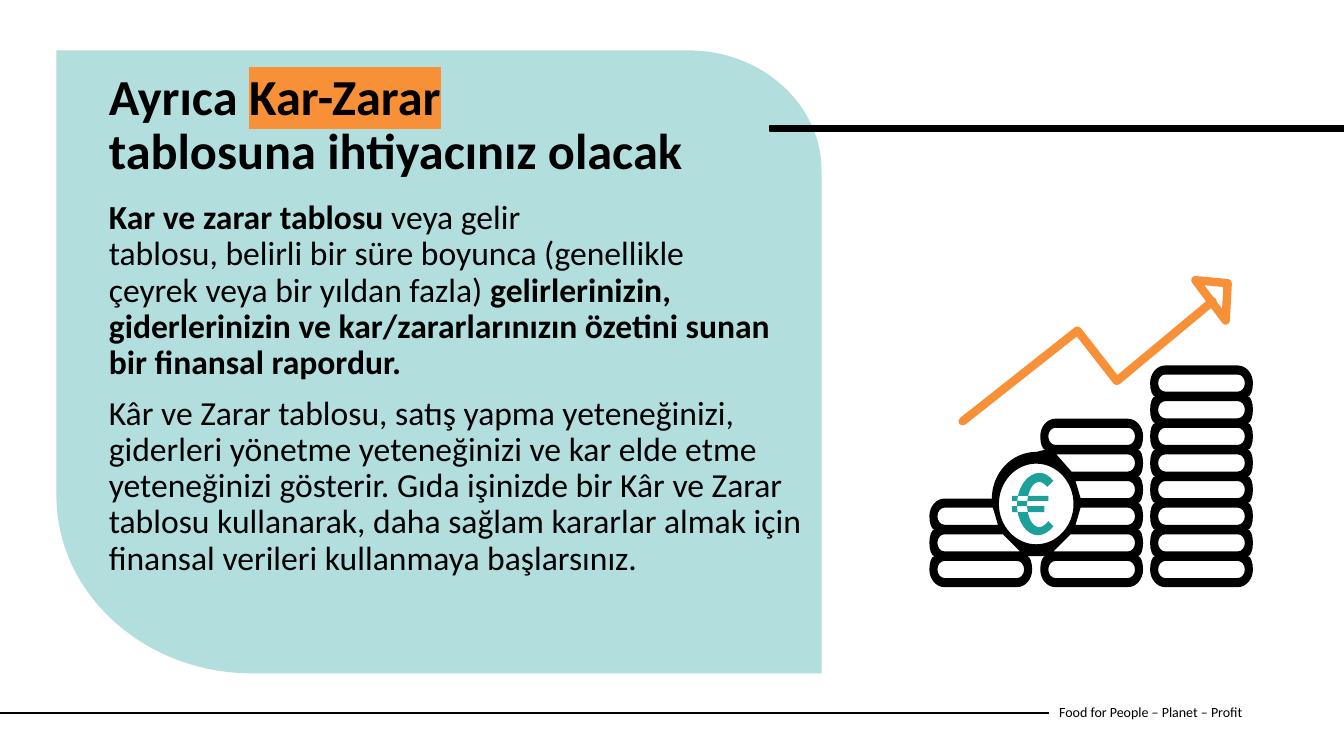
import dataclasses

import lxml.etree
import pptx
import pptx.dml.color
import pptx.enum.shapes
import pptx.enum.text
import pptx.oxml.ns
import pptx.util

COLUMNS, ROWS = 160, 90
UNIT = pptx.util.Inches(7.5) // ROWS
ROUNDNESS = 0.55
PITCH = 3.17
LOWEST_COIN = 67.8
STACK_WIDTH = 12.24
qn = pptx.oxml.ns.qn


@dataclasses.dataclass(frozen=True)
class Theme:
    font: str = "Calibri"
    ink: str = "000000"
    panel: str = "B2DEDD"
    accent: str = "F79037"
    euro: str = "1BA19A"
    title_size: int = 36
    body_size: int = 24
    footer_size: int = 10
    thin: float = 1.5
    bar: float = 1.93
    trend: float = 6


THEME = Theme()


def grid(*lengths):
    """Turn grid columns or rows into EMU."""
    return [round(length * UNIT) for length in lengths]


def rgb(colour):
    return pptx.dml.color.RGBColor.from_string(colour)


def paint(shape, fill=None, line=None, width=0):
    shape.shadow.inherit = False
    if fill:
        shape.fill.solid()
        shape.fill.fore_color.rgb = rgb(fill)
    else:
        shape.fill.background()
    if line:
        shape.line.color.rgb = rgb(line)
        shape.line.width = pptx.util.Pt(width)
    else:
        shape.line.fill.background()
    return shape


def segments(contour):
    """Yield one point per straight move and three per (end, corner) move."""
    here = None
    for move in contour:
        if isinstance(move[0], tuple):
            end, corner = move
            yield [tuple(p + ROUNDNESS * (c - p) for p, c in zip(point, corner))
                   for point in (here, end)] + [end]
            here = end
        else:
            yield [move]
            here = move


def add_outline(shapes, *contours, close=True, **look):
    traced = [list(segments(contour)) for contour in contours]
    builder = None
    for contour in traced:
        first, *others = [grid(*point) for segment in contour for point in segment]
        if builder:
            builder.move_to(*first)
        else:
            builder = shapes.build_freeform(*first, scale=1.0)
        builder.add_line_segments(others, close=close)
    shape = builder.convert_to_shape()
    route = next(shape.element.iter(qn("a:path")))
    commands = iter(list(route))
    for contour in traced:
        for segment in contour:
            straight = [next(commands) for _ in segment]
            if len(segment) == 3:
                curve = lxml.etree.Element(qn("a:cubicBezTo"))
                straight[0].addprevious(curve)
                for command in straight:
                    curve.append(command[0])
                    route.remove(command)
        if close:
            next(commands)
    return paint(shape, **look)


def add_rule(shapes, start, end):
    rule = shapes.add_connector(pptx.enum.shapes.MSO_CONNECTOR.STRAIGHT,
                                *grid(*start), *grid(*end))
    rule.line.color.rgb = rgb(THEME.ink)
    rule.line.width = pptx.util.Pt(THEME.thin)
    lxml.etree.SubElement(rule.element.spPr, qn("a:effectLst"))


def add_run(paragraph, text, size, bold=False, highlight=None):
    """Add a run; a tilde in the text stands for a no-break space."""
    run = paragraph.add_run()
    run.text = text.replace("~", chr(160))
    run.font.size = pptx.util.Pt(size)
    run.font.bold = bold
    run.font.name = THEME.font
    run.font.color.rgb = rgb(THEME.ink)
    if highlight:
        marker = lxml.etree.Element(qn("a:highlight"))
        lxml.etree.SubElement(marker, qn("a:srgbClr")).set("val", highlight)
        run._r.rPr.find(qn("a:solidFill")).addnext(marker)


def fill_text(holder, box, paragraphs, size, anchor=pptx.enum.text.MSO_ANCHOR.TOP):
    """Place a text holder and write paragraphs of (text, bold, highlight) runs."""
    holder.left, holder.top, holder.width, holder.height = grid(*box)
    frame = holder.text_frame
    frame.word_wrap = True
    frame.auto_size = pptx.enum.text.MSO_AUTO_SIZE.NONE
    frame.vertical_anchor = anchor
    for index, runs in enumerate(paragraphs):
        paragraph = frame.add_paragraph() if index else frame.paragraphs[0]
        paragraph.alignment = pptx.enum.text.PP_ALIGN.LEFT
        paragraph.line_spacing = 0.9
        paragraph.space_before = pptx.util.Pt(10 if index else 0)
        properties = paragraph._p.get_or_add_pPr()
        properties.set("marL", "0")
        properties.set("indent", "0")
        lxml.etree.SubElement(properties, qn("a:buNone"))
        for text, bold, highlight in runs:
            add_run(paragraph, text, size, bold, highlight)


def add_panel(shapes):
    left, top, right, bottom = 6.72, 6, 97.8, 80.16
    return add_outline(shapes, [
        (right, bottom), (30, bottom), ((left, 59.04), (left, bottom)),
        (left, top), (81.96, top), ((right, 20.28), (right, top))], fill=THEME.panel)


def coin_rows(count):
    """Centres of a stack's coins, from the top down."""
    return [LOWEST_COIN - PITCH * level for level in reversed(range(count))]


def stack_side(edge, inward, count):
    """Points down one side of a stack: corner, bulges with notches, corner."""
    rows = coin_rows(count)
    points = [(edge + inward * 1.8, rows[0] - 2.1)]
    for row in rows:
        points += [(edge, row), (edge + inward * 0.6, row + PITCH / 2)]
    points[-1] = (edge + inward * 1.8, rows[-1] + 2.1)
    return points


def bulge(points):
    """Round a run of side points, which lie on the edge at every second one."""
    edge = points[1][0]
    moves = [points[0]]
    for start, end in zip(points, points[1:]):
        moves.append((end, (edge, start[1] if end[0] == edge else end[1])))
    return moves


def slot_end(edge, inward, row):
    """Rounded end of a coin's opening, from its upper to its lower side."""
    shoulder = edge + inward * 0.84
    return bulge([(shoulder, row - 1.02), (edge, row), (shoulder, row + 1.02)])


def slot(left, row):
    upward = slot_end(left + 0.96, 1, row)
    shoulder, bottom = left + 1.8, row + 1.02
    return (slot_end(left + STACK_WIDTH - 0.96, -1, row)
            + [(shoulder, bottom), ((left + 0.96, row), (left + 0.96, bottom)),
               (upward[0], (left + 0.96, row - 1.02))])


def cut_slot(edge, inward, row, upper, lower):
    """Opening of a coin that is partly behind the medal."""
    return [(upper, row - 1.02), *slot_end(edge, inward, row), (lower, row + 1.02)]


def add_tall_stack(shapes):
    left, count = 136.92, 8
    outline = (bulge(stack_side(left + STACK_WIDTH, -1, count))
               + bulge(stack_side(left, 1, count)[::-1]))
    add_outline(shapes, outline, *[slot(left, row) for row in coin_rows(count)],
                fill=THEME.ink)


def add_medal_stacks(shapes):
    short, middle = 110.64, 123.84
    short_rows, middle_rows = coin_rows(3), coin_rows(6)
    middle_left = stack_side(middle, 1, 6)
    outline = (bulge(stack_side(short, 1, 3)[::-1])
               + [(118.08, 59.36), ((123.36, 53.8), (118.08, 53.8))]
               + bulge(middle_left[2::-1])
               + bulge(stack_side(middle + STACK_WIDTH, -1, 6))
               + bulge(middle_left[:-4:-1])
               + bulge(stack_side(short + STACK_WIDTH, -1, 3)[-3:]))
    medal = [(118.92, 60), ((123.36, 55.2), (118.92, 55.2)),
             ((127.8, 60), (127.8, 55.2)), ((123.36, 64.8), (127.8, 64.8)),
             ((118.92, 60), (118.92, 64.8))]
    middle_cuts = [(125.76, 127.56), (128.04, 128.64), (128.64, 128.04), (127.44, 125.4)]
    short_cuts = [(118.2, 118.8), (119.4, 121.44)]
    openings = [slot(short, short_rows[-1])]
    openings += [slot(middle, row) for row in (middle_rows[0], middle_rows[-1])]
    openings += [cut_slot(middle + STACK_WIDTH - 0.96, -1, row, *cut)
                 for row, cut in zip(middle_rows[1:], middle_cuts)]
    openings += [cut_slot(short + 0.96, 1, row, *cut)
                 for row, cut in zip(short_rows, short_cuts)]
    add_outline(shapes, outline, medal, *openings, fill=THEME.ink)


def add_euro_sign(shapes):
    crescent = [
        (121.08, 60.12), ((123.84, 56.28), (121.08, 56.28)),
        ((125.4, 57.24), (124.7, 56.28)), (124.68, 57.96),
        ((123.72, 57.36), (124.2, 57.36)), ((122.28, 60.12), (122.28, 57.36)),
        ((123.72, 62.76), (122.28, 62.76)), ((124.8, 62.04), (124.3, 62.76)),
        (125.4, 62.64), ((123.6, 63.72), (124.7, 63.72)),
        ((121.08, 60.12), (121.08, 63.72))]
    bars = [[(120.48, top), (right, top), (right, bottom), (120.48, bottom)]
            for top, right, bottom in ((59.04, 124.8, 59.64), (60.24, 124.32, 60.96))]
    add_outline(shapes, crescent, *bars, fill=THEME.euro)


def add_trend_arrow(shapes):
    shaft = [(114.6, 50.16), (128.28, 39.36), (132.96, 45.36), (144.36, 35.88)]
    head = [(142.32, 33.36), (146.16, 33.72), (145.92, 38.16), (142.32, 33.36)]
    arrow = add_outline(shapes, shaft, head, close=False,
                        line=THEME.accent, width=THEME.trend)
    stroke = arrow.element.spPr.find(qn("a:ln"))
    stroke.set("cap", "rnd")
    lxml.etree.SubElement(stroke, qn("a:round"))


def add_footer(shapes):
    add_rule(shapes, (0, 84.84), (124.92, 84.84))
    box = (124.92, 82.5, 32.76, 4.8)
    fill_text(shapes.add_textbox(*grid(*box)), box,
              [[("Food for People – Planet – Profit", False, None)]],
              THEME.footer_size, pptx.enum.text.MSO_ANCHOR.MIDDLE)


def main():
    deck = pptx.Presentation()
    deck.slide_width, deck.slide_height = grid(COLUMNS, ROWS)
    slide = deck.slides.add_slide(deck.slide_layouts[1])
    title, body = slide.placeholders[0], slide.placeholders[1]

    title.element.addprevious(add_panel(slide.shapes).element)
    paint(slide.shapes.add_shape(pptx.enum.shapes.MSO_SHAPE.RECTANGLE,
                                 *grid(91.68, 15, 68.32, 0.6)),
          fill=THEME.ink, line=THEME.ink, width=THEME.bar)
    fill_text(title, (11.76, 7.92, 77.04, 13.08), [[
        ("Ayrıca ", True, None),
        ("Kar-Zarar", True, THEME.accent),
        (" tablosuna~ihtiyacınız olacak", True, None),
    ]], THEME.title_size)
    fill_text(body, (11.76, 23.28, 86.04, 52.68), [
        [("Kar ve zarar tablosu ", True, None),
         ("veya gelir tablosu,~belirli~bir~süre~boyunca (genellikle "
          "çeyrek~veya bir yıldan fazla)~", False, None),
         ("gelirlerinizin, giderlerinizin ve kar/zararlarınızın özetini "
          "sunan bir finansal rapordur.~", True, None)],
        [("Kâr ve Zarar tablosu, satış yapma yeteneğinizi, giderleri yönetme "
          "yeteneğinizi ve kar elde etme yeteneğinizi gösterir. Gıda işinizde "
          "bir Kâr ve Zarar tablosu kullanarak, daha sağlam kararlar almak için "
          "finansal verileri kullanmaya başlarsınız.", False, None)],
    ], THEME.body_size)
    drawing = slide.shapes.add_group_shape().shapes
    for add_part in (add_tall_stack, add_trend_arrow, add_medal_stacks, add_euro_sign):
        add_part(drawing)
    add_footer(slide.shapes)
    deck.save("out.pptx")


if __name__ == "__main__":
    main()
